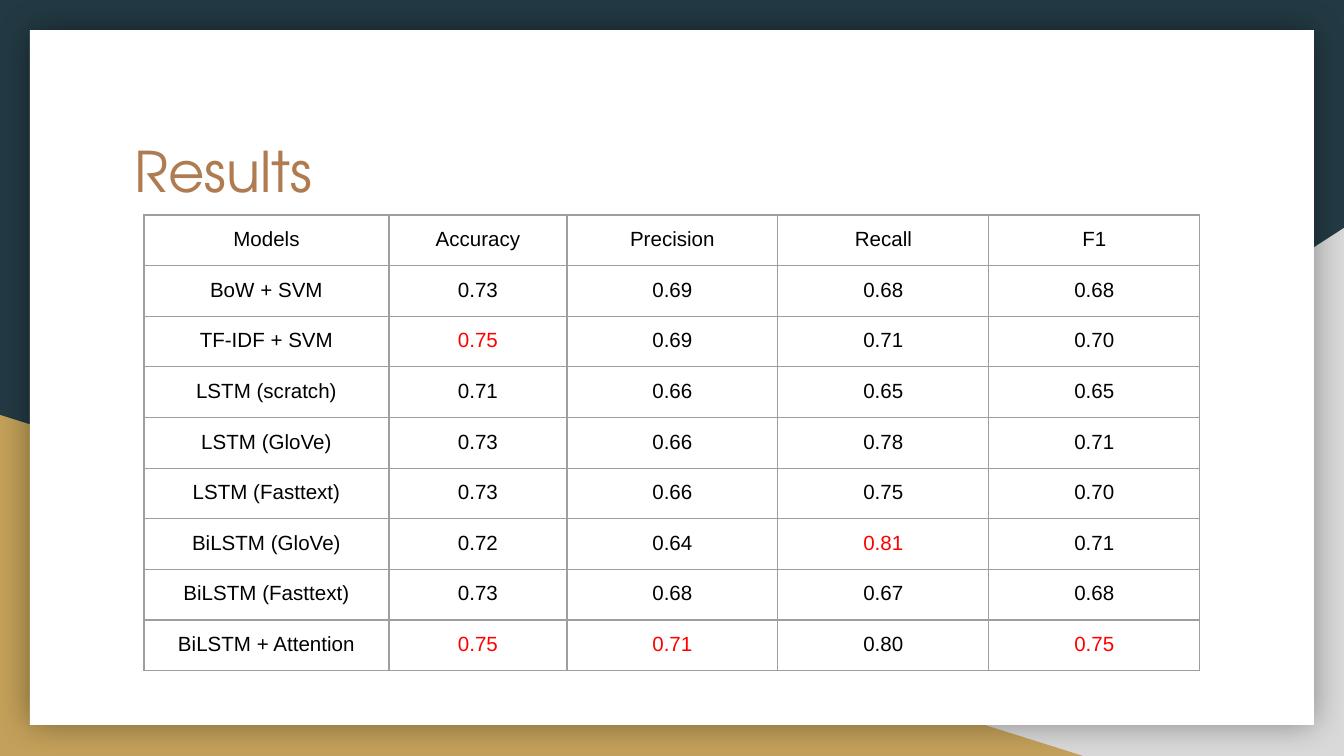
from lxml.etree import SubElement
from pptx import Presentation
from pptx.dml.color import RGBColor
from pptx.enum.shapes import MSO_SHAPE
from pptx.enum.text import MSO_ANCHOR, PP_ALIGN
from pptx.oxml import parse_xml
from pptx.oxml.ns import nsdecls, qn
from pptx.util import Pt

PX = 9144000 / 1344

NAVY = RGBColor(0x23, 0x3A, 0x44)
GREY = RGBColor(0xD9, 0xD9, 0xD9)
GOLD = RGBColor(0xC4, 0xA1, 0x5A)
WHITE = RGBColor(0xFF, 0xFF, 0xFF)
BROWN = RGBColor(0xAF, 0x7B, 0x51)
BLACK = RGBColor(0x00, 0x00, 0x00)
RED = RGBColor(0xFF, 0x00, 0x00)
BORDER = RGBColor(0x9E, 0x9E, 0x9E)

HEADER = ["Models", "Accuracy", "Precision", "Recall", "F1"]
RESULTS = [
    ["BoW + SVM", "0.73", "0.69", "0.68", "0.68"],
    ["TF-IDF + SVM", "0.75", "0.69", "0.71", "0.70"],
    ["LSTM (scratch)", "0.71", "0.66", "0.65", "0.65"],
    ["LSTM (GloVe)", "0.73", "0.66", "0.78", "0.71"],
    ["LSTM (Fasttext)", "0.73", "0.66", "0.75", "0.70"],
    ["BiLSTM (GloVe)", "0.72", "0.64", "0.81", "0.71"],
    ["BiLSTM (Fasttext)", "0.73", "0.68", "0.67", "0.68"],
    ["BiLSTM + Attention", "0.75", "0.71", "0.80", "0.75"],
]
COLUMN_WIDTHS = [245, 178, 211, 211, 211]
ROW_HEIGHT = 49


def px(*lengths):
    """Turn px lengths into a list of EMU."""
    return [round(length * PX) for length in lengths]


def set_borders(cell):
    properties = cell._tc.get_or_add_tcPr()
    for position, side in enumerate(("lnL", "lnR", "lnT", "lnB")):
        properties.insert(position, parse_xml(
            f'<a:{side} {nsdecls("a")} w="{Pt(0.75)}"><a:solidFill>'
            f'<a:srgbClr val="{BORDER}"/></a:solidFill></a:{side}>'))


deck = Presentation()
deck.slide_width, deck.slide_height = px(1344, 756)
page = deck.slides.add_slide(deck.slide_layouts[6])
page.background.fill.solid()
page.background.fill.fore_color.rgb = NAVY

# Backdrop triangles and the white card
backdrop = []
for preset, place, colour in [
    (MSO_SHAPE.RIGHT_TRIANGLE, (527, 228, 817, 528), GREY),
    (MSO_SHAPE.RIGHT_TRIANGLE, (0, 415, 1083, 341), GOLD),
    (MSO_SHAPE.RECTANGLE, (30, 30, 1284, 695), WHITE),
]:
    shape = page.shapes.add_shape(preset, *px(*place))
    shape.fill.solid()
    shape.fill.fore_color.rgb = colour
    shape.line.fill.background()
    shape.shadow.inherit = False
    backdrop.append(shape)
grey_triangle, gold_triangle, card = backdrop
grey_triangle._element.spPr.find(qn("a:xfrm")).set("flipH", "1")

effects = card._element.spPr.find(qn("a:effectLst"))
shadow = SubElement(effects, qn("a:outerShdw"), blurRad=str(Pt(18)),
                    dist="0", dir="0", algn="ctr", rotWithShape="0")
shadow_colour = SubElement(shadow, qn("a:srgbClr"), val=str(BLACK))
SubElement(shadow_colour, qn("a:alpha"), val="40000")

# Title
title = page.shapes.add_textbox(*px(121, 124, 1103, 140))
frame = title.text_frame
frame.word_wrap = True
frame.vertical_anchor = MSO_ANCHOR.TOP
frame.margin_left, frame.margin_top, frame.margin_right, frame.margin_bottom = px(13, 13, 13, 13)
frame.text = "Results"
font = frame.paragraphs[0].runs[0].font
font.name, font.size = "TeX Gyre Adventor", Pt(30)
font.color.rgb = BROWN

# Results table, with the best score of each column in red
rows = [HEADER] + RESULTS
best = [max(scores) for scores in zip(*RESULTS)]
table = page.shapes.add_table(
    len(rows), len(HEADER),
    *px(144, 215, sum(COLUMN_WIDTHS), ROW_HEIGHT * len(rows))).table
table.first_row = table.horz_banding = False
for column, width in zip(table.columns, px(*COLUMN_WIDTHS)):
    column.width = width
for row, texts in zip(table.rows, rows):
    row.height = px(ROW_HEIGHT)[0]
    for index, (cell, text) in enumerate(zip(row.cells, texts)):
        cell.margin_left, cell.margin_top, cell.margin_right, cell.margin_bottom = px(13, 13, 13, 13)
        cell.fill.background()
        set_borders(cell)
        cell.text = text
        para = cell.text_frame.paragraphs[0]
        para.alignment = PP_ALIGN.CENTER
        font = para.runs[0].font
        font.name, font.size = "Arial", Pt(11)
        font.color.rgb = RED if index > 0 and text == best[index] else BLACK

deck.save("out.pptx")
